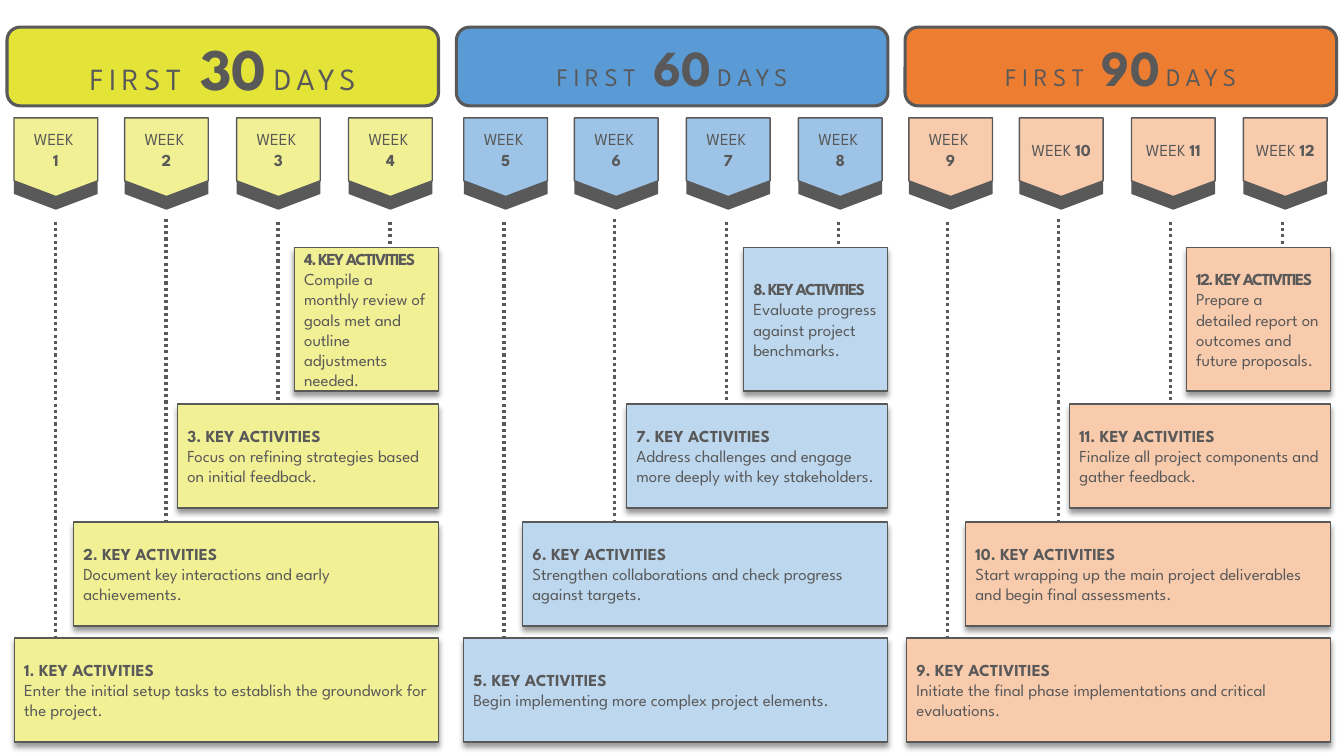
"""Build a 30-60-90 day plan with weekly markers and key activities."""
import pptx
import pptx.util
import pptx.dml.color
import pptx.enum.dml
import pptx.enum.shapes
import pptx.enum.text
import pptx.oxml.ns
import lxml.etree

Pt = pptx.util.Pt
RGB = pptx.dml.color.RGBColor.from_string
qn = pptx.oxml.ns.qn
KIND = pptx.enum.shapes.MSO_SHAPE
ALIGN = pptx.enum.text.PP_ALIGN
sub = lxml.etree.SubElement
HUES = {"ink": "595959", "halo": "FFFFFF", "shade": "000000"}


def draw(shapes, kind, box, fill, width):
    """Add a filled shape with an outline of the given width, if any."""
    item = shapes.add_shape(kind, *map(Pt, box))
    item.shadow.inherit = False
    item.fill.solid()
    item.fill.fore_color.rgb = RGB(fill)
    if width:
        item.line.color.rgb = RGB(HUES["ink"])
        item.line.width = Pt(width)
    else:
        item.line.fill.background()
    return item


def write(item, align, runs):
    """Fill one paragraph with (text, size, bold, spacing) runs; None breaks the line."""
    frame = item.text_frame
    frame.word_wrap = True
    frame.vertical_anchor = pptx.enum.text.MSO_ANCHOR.MIDDLE
    para = frame.paragraphs[0]
    para.alignment = align
    for part in runs:
        if part is None:
            para.add_line_break()
            continue
        text, size, bold, space = part
        run = para.add_run()
        run.text = text
        look = {"name": "League Spartan", "size": Pt(size), "bold": bold}
        for key, value in look.items():
            setattr(run.font, key, value)
        run.font.color.rgb = RGB(HUES["ink"])
        if space:
            run.font._element.set("spc", str(space * 100))
    return para


plans = [
    {"days": "30", "sizes": (22, 42), "left": 5, "mark": 10, "line": 39.6, "right": 313.2,
     "fills": ("E4E438", "F2F094", "F2F094"),
     "tasks": ["Enter the initial setup tasks to establish the groundwork for the project.",
               "Document key interactions and early achievements.",
               "Focus on refining strategies based on initial feedback.",
               "Compile a monthly review of goals met and outline adjustments needed."]},
    {"days": "60", "sizes": (18, 36), "left": 326, "mark": 331.3, "line": 360, "right": 634,
     "fills": ("5B9BD5", "9DC3E6", "BDD7EE"),
     "tasks": ["Begin implementing more complex project elements.",
               "Strengthen collaborations and check progress against targets.",
               "Address challenges and engage more deeply with key stakeholders.",
               "Evaluate progress against project benchmarks."]},
    {"days": "90", "sizes": (18, 36), "left": 646.5, "mark": 649.2, "line": 676.8, "right": 950.4,
     "fills": ("ED7D31", "F8CBAD", "F8CBAD"),
     "tasks": ["Initiate the final phase implementations and critical evaluations.",
               "Start wrapping up the main project deliverables and begin final assessments.",
               "Finalize all project components and gather feedback.",
               "Prepare a detailed report on outcomes and future proposals."]},
]
steps = [0, 79, 159, 239]
starts = [158.4, 156.2, 158.4, 158.4]
ends = [467, 436, 352, 262]
cards = [(455.8, 303, 74.2), (373, 260.8, 74.2), (288.7, 186.5, 74.2), (177, 103, 102.2)]

deck = pptx.Presentation()
deck.slide_width, deck.slide_height = Pt(960), Pt(540)
slide = deck.slides.add_slide(deck.slide_layouts[6])

for phase, plan in enumerate(plans):
    strong, pale, soft = plan["fills"]
    small, large = plan["sizes"]
    banner = draw(slide.shapes, KIND.ROUNDED_RECTANGLE, (plan["left"], 19.4, 308.2, 56.2), strong, 2.25)
    para = write(banner, ALIGN.CENTER, [("FIRST ", small, False, 4), (plan["days"], large, True, 0),
                                        (" ", small, False, 0), ("DAYS", small, False, 4)])
    edge = lxml.etree.Element(qn("a:ln"), w=str(Pt(1.5)))
    sub(sub(edge, qn("a:solidFill")), qn("a:srgbClr"), val=HUES["halo"])
    para.runs[1].font._element.insert(0, edge)

    for col, step in enumerate(steps):
        week = phase * 4 + col + 1
        group = slide.shapes.add_group_shape()
        spot = plan["mark"] + step
        draw(group.shapes, KIND.FLOWCHART_OFFPAGE_CONNECTOR, (spot, 93.6, 59.8, 56.2), HUES["ink"], 0)
        badge = draw(group.shapes, KIND.FLOWCHART_OFFPAGE_CONNECTOR, (spot, 84.2, 59.8, 56.2), pale, 1)
        gap = [None] if week < 10 else []
        write(badge, ALIGN.CENTER, [("WEEK ", 12, False, 0), *gap, (str(week), 12, True, 0)])

        x = Pt(plan["line"] + step)
        stem = slide.shapes.add_connector(pptx.enum.shapes.MSO_CONNECTOR.STRAIGHT,
                                          x, Pt(starts[col]), x, Pt(ends[col]))
        stem.line.color.rgb = RGB(HUES["ink"])
        stem.line.width = Pt(2.25)
        stem.line.dash_style = pptx.enum.dml.MSO_LINE.ROUND_DOT
        sub(stem._element.spPr, qn("a:effectLst"))

        top, width, height = cards[col]
        card = draw(slide.shapes, KIND.RECTANGLE, (plan["right"] - width, top, width, height), soft, 1)
        shade = sub(card._element.spPr.find(qn("a:effectLst")), qn("a:outerShdw"),
                    blurRad=str(Pt(4)), dist=str(Pt(3)), dir="5400000", algn="t", rotWithShape="0")
        tone = sub(shade, qn("a:srgbClr"), val=HUES["shade"])
        sub(tone, qn("a:alpha"), val="40000")
        write(card, ALIGN.LEFT, [(f"{week}. KEY ACTIVITIES", 12, True, -1 if col == 3 else 0), None,
                                 (plan["tasks"][col], 12, False, 0)])

deck.save("out.pptx")
